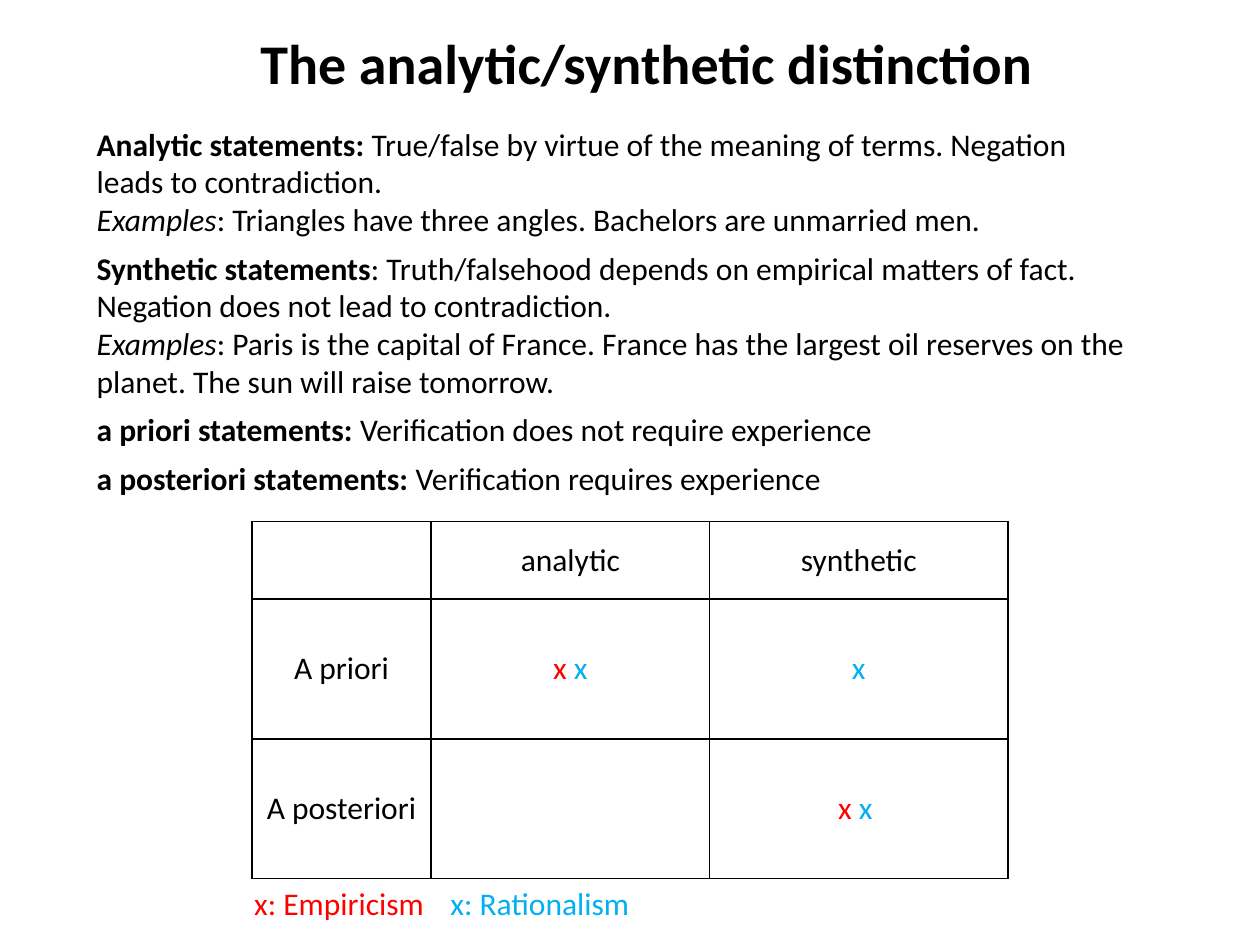
from lxml.etree import SubElement
from pptx import Presentation
from pptx.dml.color import RGBColor
from pptx.enum.text import MSO_ANCHOR as Anchor, MSO_AUTO_SIZE as AutoSize, PP_ALIGN as Align
from pptx.oxml.ns import qn
from pptx.util import Pt

BLACK, RED, BLUE = "000000", "FF0000", "00B0F0"


def add_run(para, text, color=BLACK, size=18, bold=False, italic=False):
    span = para.add_run()
    span.text = text
    font = span.font
    font.name, font.size, font.bold, font.italic = "Calibri", Pt(size), bold, italic
    font.color.rgb = RGBColor.from_string(color)


def add_box(left, top, width, height, wrap=False):
    """Add a text box that grows with its text and return its frame."""
    frame = page.shapes.add_textbox(Pt(left), Pt(top), Pt(width), Pt(height)).text_frame
    frame.word_wrap = wrap
    frame.auto_size = AutoSize.SHAPE_TO_FIT_TEXT
    return frame


deck = Presentation()
deck.slide_width, deck.slide_height = Pt(720), Pt(540)
page = deck.slides.add_slide(deck.slide_layouts[6])

# Table of statement kinds
cells = [
    [[], [("analytic", BLACK)], [("synthetic", BLACK)]],
    [[("A priori", BLACK)], [("x ", RED), ("x", BLUE)], [("x", BLUE)]],
    [[("A posteriori", BLACK)], [], [("x ", RED), ("x ", BLUE)]],
]
table = page.shapes.add_table(3, 3, Pt(144), Pt(298), Pt(432), Pt(204)).table
table.first_row = table.horz_banding = False
for column, width in zip(table.columns, (102.3, 159.3, 170.4)):
    column.width = Pt(width)
for row, height in zip(table.rows, (44.4, 79.8, 79.8)):
    row.height = Pt(height)

for row, row_runs in zip(table.rows, cells):
    for cell, runs in zip(row.cells, row_runs):
        cell.vertical_anchor = Anchor.MIDDLE
        para = cell.text_frame.paragraphs[0]
        para.alignment = Align.CENTER
        for text, color in runs:
            add_run(para, text, color)
        properties = cell._tc.get_or_add_tcPr()
        for side in ("a:lnL", "a:lnR", "a:lnT", "a:lnB"):
            line = SubElement(properties, qn(side), w=str(Pt(1)))
            SubElement(SubElement(line, qn("a:solidFill")), qn("a:srgbClr"), val=BLACK)
        cell.fill.background()

# Legend
para = add_box(138.2, 501.8, 231, 29).paragraphs[0]
tabs = SubElement(para._p.get_or_add_pPr(), qn("a:tabLst"))
SubElement(tabs, qn("a:tab"), pos=str(Pt(108)), algn="l")
add_run(para, "x: Empiricism\t ", RED)
add_run(para, "x: Rationalism", BLUE)

# Title
para = add_box(139, 13, 461, 46).paragraphs[0]
para.alignment = Align.CENTER
add_run(para, "The analytic/synthetic distinction", size=32, bold=True)

# Definitions: term, meaning, examples
definitions = [
    ("Analytic statements: ",
     "True/false by virtue of the meaning of terms. Negation leads to contradiction. ",
     ": Triangles have three angles. Bachelors are unmarried men."),
    ("Synthetic statements",
     ": Truth/falsehood depends on empirical matters of fact. "
     "Negation does not lead to contradiction. ",
     ": Paris is the capital of France. France has the largest oil reserves on the planet. "
     "The sun will raise tomorrow."),
    ("a priori statements: ", "Verification does not require experience", None),
    ("a posteriori statements: ", "Verification requires experience", None),
]
frame = add_box(48.2, 67.7, 607, 222, wrap=True)
for index, (term, meaning, examples) in enumerate(definitions):
    para = frame.add_paragraph() if index else frame.paragraphs[0]
    para.space_after = Pt(6)
    add_run(para, term, bold=True)
    add_run(para, meaning)
    if examples:
        para.add_line_break()
        add_run(para, "Examples", italic=True)
        add_run(para, examples)

deck.save("out.pptx")
